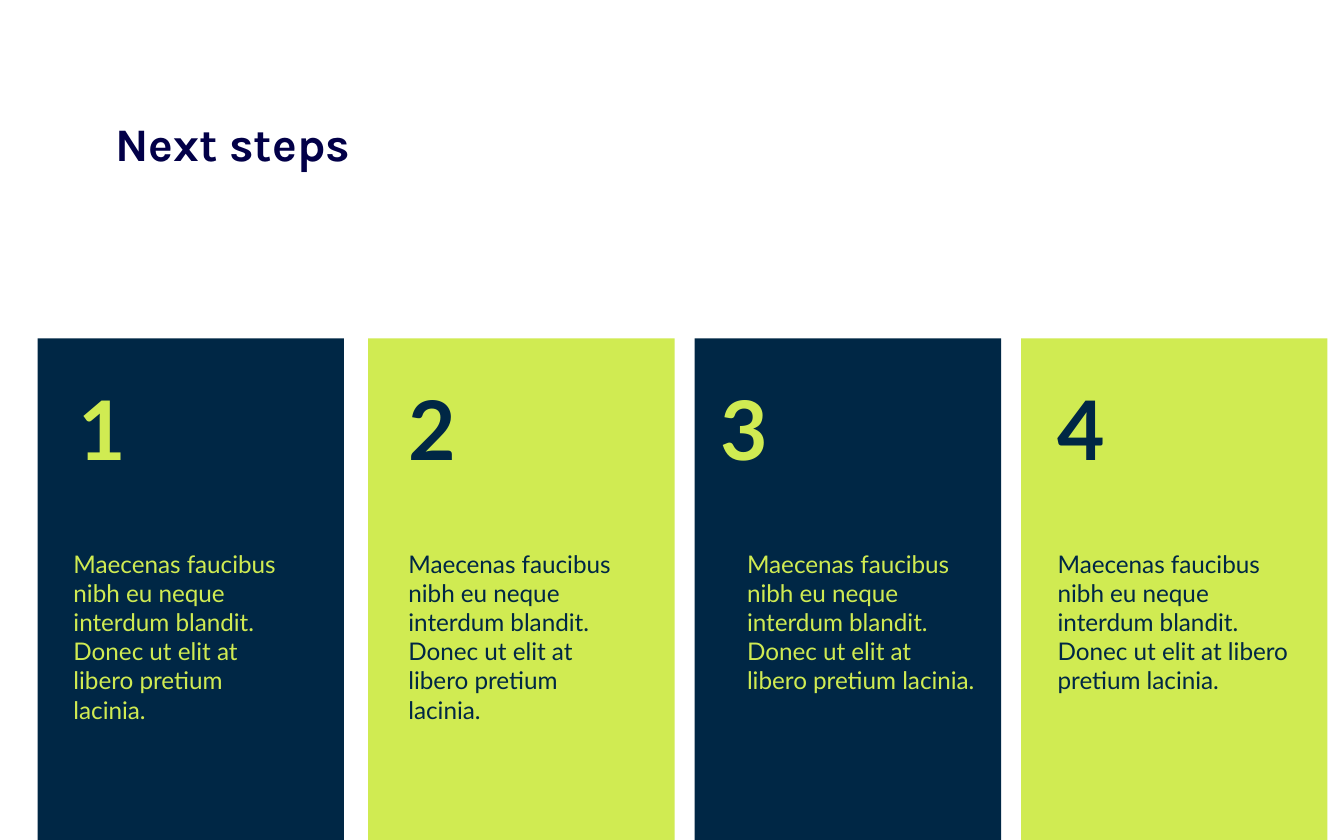
"""Build the "Next steps" slide with four numbered cards."""
from dataclasses import dataclass

from pptx import Presentation
from pptx import util as u
from pptx.dml.color import RGBColor
from pptx.enum import shapes, text

COLORS = {"navy": "002745", "lime": "D0EB52", "title": "020048"}
BODY = "Maecenas faucibus nibh eu neque interdum blandit. Donec ut elit at libero pretium lacinia."
CARD_TOP, CARD_WIDTH, CARD_HEIGHT = 6.4, 5.79, 9.48
NUMBER_TOP, NUMBER_WIDTH, NUMBER_HEIGHT = 6.91, 1.3, 2.41
BODY_TOP, BODY_HEIGHT = 10.13, 3.8


@dataclass(frozen=True)
class Step:
    left: float
    number_left: float
    body_left: float
    body_width: float
    fill: str
    ink: str


STEPS = [
    Step(0.71, 1.24, 1.14, 4.78, "navy", "lime"),
    Step(6.96, 7.47, 7.47, 4.75, "lime", "navy"),
    Step(13.13, 13.36, 13.87, 4.8, "navy", "lime"),
    Step(19.3, 19.74, 19.74, 4.93, "lime", "navy"),
]


def place(shape, left: float, top: float, width: float, height: float) -> None:
    shape.left, shape.top = u.Cm(left), u.Cm(top)
    shape.width, shape.height = u.Cm(width), u.Cm(height)


def write(shape, content: str, *, size: float, color: str,
          font: str = "Lato", bold: bool = False) -> None:
    frame = shape.text_frame
    frame.text = content
    frame.word_wrap = True
    frame.auto_size = text.MSO_AUTO_SIZE.NONE
    frame.vertical_anchor = text.MSO_ANCHOR.TOP
    frame.margin_left = frame.margin_right = u.Cm(0.25)
    frame.margin_top = frame.margin_bottom = u.Cm(0.25)
    paragraph = frame.paragraphs[0]
    paragraph.alignment = text.PP_ALIGN.LEFT
    run_font = paragraph.runs[0].font
    run_font.name, run_font.size, run_font.bold = font, u.Pt(size), bold
    run_font.color.rgb = RGBColor.from_string(COLORS[color])


def add_text(slide, box: tuple[float, float, float, float], content: str, **style) -> None:
    shape = slide.shapes.add_textbox(*map(u.Cm, box))
    write(shape, content, **style)


def add_step(slide, number: int, step: Step) -> None:
    card = slide.shapes.add_shape(
        shapes.MSO_SHAPE.RECTANGLE,
        *map(u.Cm, (step.left, CARD_TOP, CARD_WIDTH, CARD_HEIGHT)))
    card.shadow.inherit = False
    card.fill.solid()
    card.fill.fore_color.rgb = RGBColor.from_string(COLORS[step.fill])
    card.line.fill.background()
    add_text(slide, (step.number_left, NUMBER_TOP, NUMBER_WIDTH, NUMBER_HEIGHT),
             str(number), size=44, color=step.ink, bold=True)
    add_text(slide, (step.body_left, BODY_TOP, step.body_width, BODY_HEIGHT),
             BODY, size=13, color=step.ink)


def main() -> None:
    presentation = Presentation()
    presentation.slide_width, presentation.slide_height = u.Cm(25.4), u.Cm(15.88)
    slide = presentation.slides.add_slide(presentation.slide_layouts[5])
    title = slide.shapes.title
    place(title, 1.93, 1.93, 8.41, 2.16)
    write(title, "Next steps", size=25, color="title", font="Karla", bold=True)
    for number, step in enumerate(STEPS, 1):
        add_step(slide, number, step)
    presentation.save("out.pptx")


if __name__ == "__main__":
    main()
